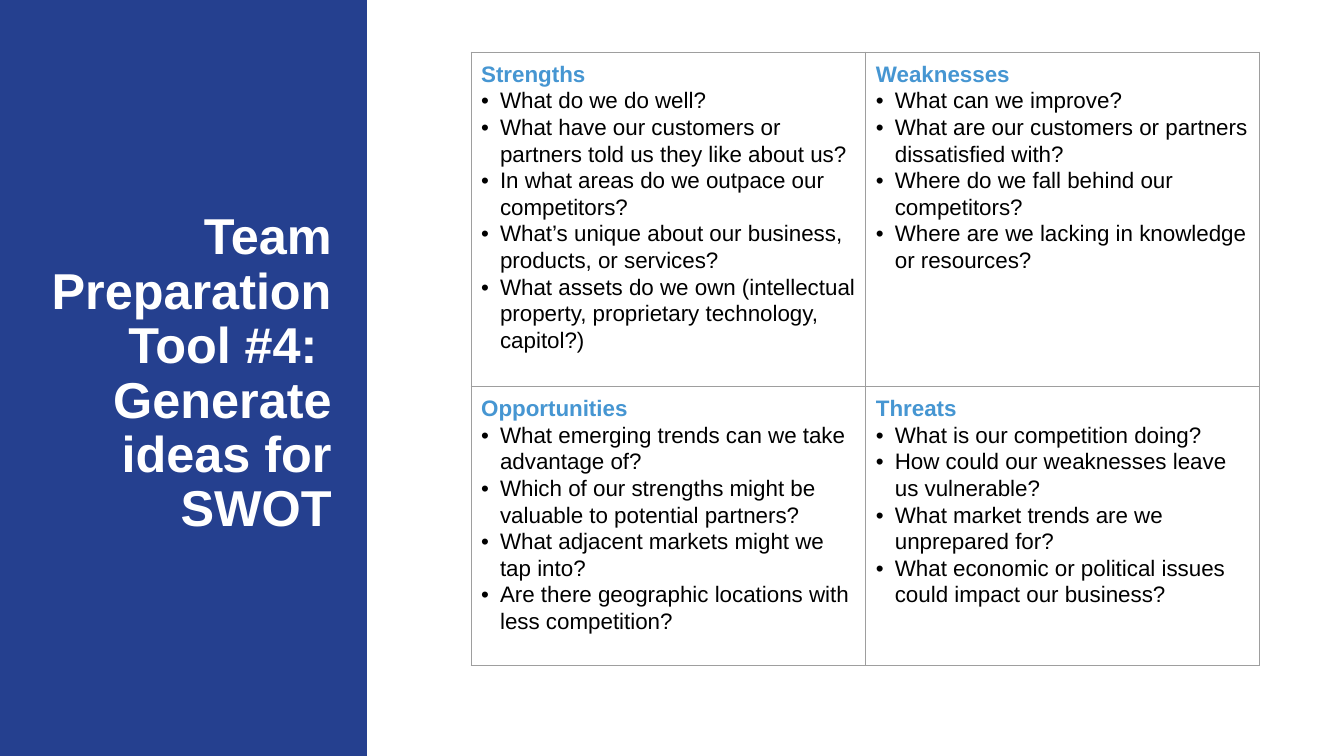
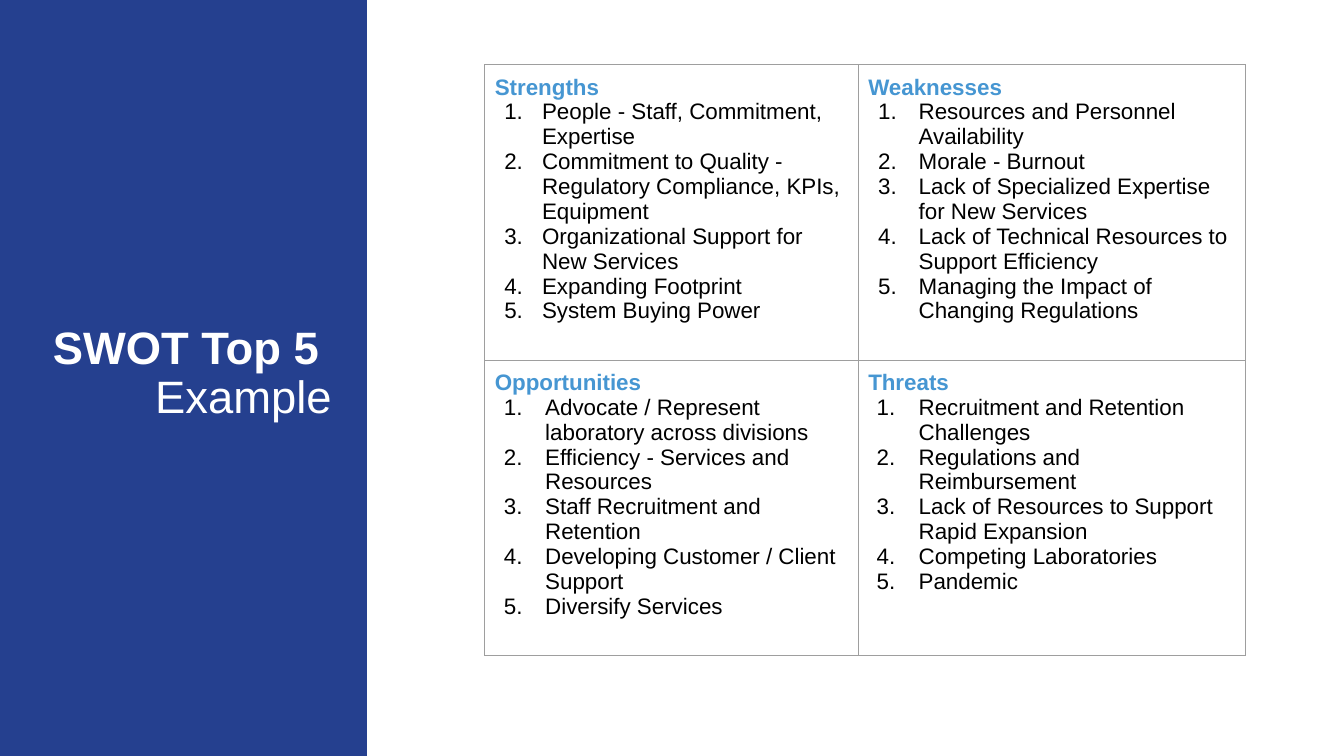
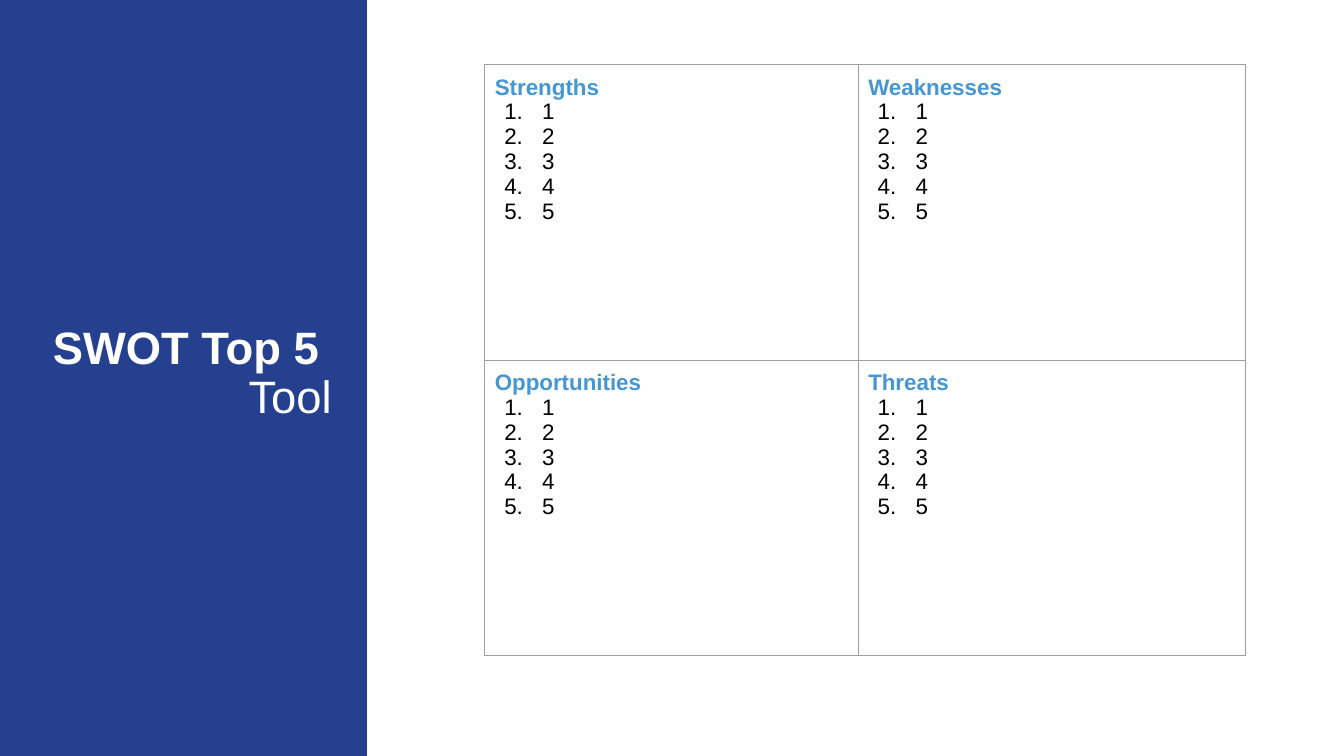
from dataclasses import dataclass

import lxml.etree
import pptx
import pptx.dml.color
import pptx.enum.shapes
import pptx.enum.text
import pptx.oxml.ns
import pptx.util

Pt = pptx.util.Pt
qn = pptx.oxml.ns.qn
SubElement = lxml.etree.SubElement

# Shared look
FONT = "Arial"
COLORS = {"band": "25408F", "title": "FFFFFF", "heading": "4696D2",
          "body": "000000", "border": "9E9E9E"}
SLIDE_W, SLIDE_H = 960, 540
BAND_W = 262
TITLE_BOX = (18, 215, 226, 105)
CELL_SIZE, CELL_MARGIN = 16, 7.2
HEADINGS = ("Strengths", "Weaknesses", "Opportunities", "Threats")


@dataclass
class Bullets:
    left: float
    hanging: float
    numbered: bool = True
    spacing: float = 1.0


@dataclass
class Quadrant:
    items: list[str]
    bullets: Bullets


@dataclass
class Grid:
    left: float
    top: float
    cols: tuple[float, float]
    rows: tuple[float, float]


@dataclass
class SwotSlide:
    title: list[tuple[str, bool]]  # lines, each with its bold setting
    title_size: float
    grid: Grid
    quadrants: list[Quadrant]


def rgb(name: str) -> pptx.dml.color.RGBColor:
    return pptx.dml.color.RGBColor.from_string(COLORS[name])


def add_text(p, text: str, *, size: float, color: str, bold: bool = False) -> None:
    r = p.add_run()
    r.text = text
    r.font.name, r.font.size, r.font.bold = FONT, Pt(size), bold
    r.font.color.rgb = rgb(color)


def set_bullet(p, b: Bullets) -> None:
    p.line_spacing = b.spacing
    pPr = p._p.get_or_add_pPr()
    pPr.set("marL", str(Pt(b.left)))
    pPr.set("indent", str(-Pt(b.hanging)))
    SubElement(SubElement(pPr, qn("a:buClr")), qn("a:srgbClr"), val=COLORS["body"])
    SubElement(pPr, qn("a:buFont"), typeface=FONT)
    if b.numbered:
        SubElement(pPr, qn("a:buAutoNum"), type="arabicPeriod")
    else:
        SubElement(pPr, qn("a:buChar"), char="•")


def set_borders(cell) -> None:
    tcPr = cell._tc.get_or_add_tcPr()
    for side in ("lnL", "lnR", "lnT", "lnB"):
        ln = SubElement(tcPr, qn(f"a:{side}"), w=str(Pt(0.75)))
        fill = SubElement(ln, qn("a:solidFill"))
        SubElement(fill, qn("a:srgbClr"), val=COLORS["border"])


def add_band(s) -> None:
    sp = s.shapes.add_shape(pptx.enum.shapes.MSO_SHAPE.RECTANGLE,
                            0, 0, Pt(BAND_W), Pt(SLIDE_H))
    sp.shadow.inherit = False
    sp.fill.solid()
    sp.fill.fore_color.rgb = rgb("band")
    sp.line.fill.background()


def add_title(s, lines: list[tuple[str, bool]], size: float) -> None:
    tf = s.shapes.add_textbox(*map(Pt, TITLE_BOX)).text_frame
    tf.word_wrap = True
    tf.vertical_anchor = pptx.enum.text.MSO_ANCHOR.MIDDLE
    p = tf.paragraphs[0]
    p.alignment = pptx.enum.text.PP_ALIGN.RIGHT
    p.line_spacing = 0.9
    for i, (text, bold) in enumerate(lines):
        if i:
            p.add_line_break()
        add_text(p, text, size=size, color="title", bold=bold)


def fill_cell(cell, heading: str, quadrant: Quadrant) -> None:
    cell.margin_left = cell.margin_right = Pt(CELL_MARGIN)
    cell.margin_top = cell.margin_bottom = Pt(CELL_MARGIN)
    set_borders(cell)
    cell.fill.background()
    tf = cell.text_frame
    add_text(tf.paragraphs[0], heading, size=CELL_SIZE, color="heading", bold=True)
    for item in quadrant.items:
        p = tf.add_paragraph()
        set_bullet(p, quadrant.bullets)
        add_text(p, item, size=CELL_SIZE, color="body")


def add_swot_table(s, grid: Grid, quadrants: list[Quadrant]) -> None:
    table = s.shapes.add_table(2, 2, Pt(grid.left), Pt(grid.top),
                               Pt(sum(grid.cols)), Pt(sum(grid.rows))).table
    table.first_row = table.horz_banding = False
    for col, width in zip(table.columns, grid.cols):
        col.width = Pt(width)
    for row, height in zip(table.rows, grid.rows):
        row.height = Pt(height)
    for cell, heading, quadrant in zip(table.iter_cells(), HEADINGS, quadrants):
        fill_cell(cell, heading, quadrant)


# Content
DOTS = Bullets(13.5, 13.5, numbered=False, spacing=1.07)
NUMBERS = Bullets(33.75, 27)
TOP5_GRID = Grid(346.25, 46.25, (266.75, 276.75), (211, 211))

SLIDES = [
    SwotSlide(
        [("Team Preparation Tool #4: ", True), ("Generate ideas for SWOT", True)], 36,
        Grid(336.5, 37.25, (282, 281), (222, 199)),
        [
            Quadrant(["What do we do well?",
                      "What have our customers or partners told us they like about us?",
                      "In what areas do we outpace our competitors?",
                      "What’s unique about our business, products, or services?",
                      "What assets do we own (intellectual property, proprietary "
                      "technology, capitol?)"], DOTS),
            Quadrant(["What can we improve?",
                      "What are our customers or partners dissatisfied with?",
                      "Where do we fall behind our competitors?",
                      "Where are we lacking in knowledge or resources?"], DOTS),
            Quadrant(["What emerging trends can we take advantage of?",
                      "Which of our strengths might be valuable to potential partners?",
                      "What adjacent markets might we tap into?",
                      "Are there geographic locations with less competition?"], DOTS),
            Quadrant(["What is our competition doing?",
                      "How could our weaknesses leave us vulnerable?",
                      "What market trends are we unprepared for?",
                      "What economic or political issues could impact our business?"], DOTS),
        ]),
    SwotSlide(
        [("SWOT Top 5 ", True), ("Example", False)], 32.4, TOP5_GRID,
        [
            Quadrant(["People - Staff, Commitment, Expertise",
                      "Commitment to Quality - Regulatory Compliance, KPIs, Equipment",
                      "Organizational Support for New Services",
                      "Expanding Footprint",
                      "System Buying Power"], NUMBERS),
            Quadrant(["Resources and Personnel Availability",
                      "Morale - Burnout",
                      "Lack of Specialized Expertise for New Services",
                      "Lack of Technical Resources to Support Efficiency",
                      "Managing the Impact of Changing Regulations"], Bullets(36, 29)),
            Quadrant(["Advocate / Represent laboratory across divisions",
                      "Efficiency - Services and Resources",
                      "Staff Recruitment and Retention",
                      "Developing Customer / Client Support",
                      "Diversify Services"], Bullets(36, 29.5)),
            Quadrant(["Recruitment and Retention Challenges",
                      "Regulations and Reimbursement",
                      "Lack of Resources to Support Rapid Expansion",
                      "Competing Laboratories",
                      "Pandemic"], Bullets(36, 30)),
        ]),
    SwotSlide(
        [("SWOT Top 5 ", True), ("Tool", False)], 32.4, TOP5_GRID,
        [Quadrant([str(n) for n in range(1, 6)], NUMBERS) for _ in HEADINGS]),
]


def main() -> None:
    prs = pptx.Presentation()
    prs.slide_width, prs.slide_height = Pt(SLIDE_W), Pt(SLIDE_H)
    for swot in SLIDES:
        s = prs.slides.add_slide(prs.slide_layouts[6])
        add_band(s)
        add_title(s, swot.title, swot.title_size)
        add_swot_table(s, swot.grid, swot.quadrants)
    prs.save("out.pptx")


if __name__ == "__main__":
    main()
